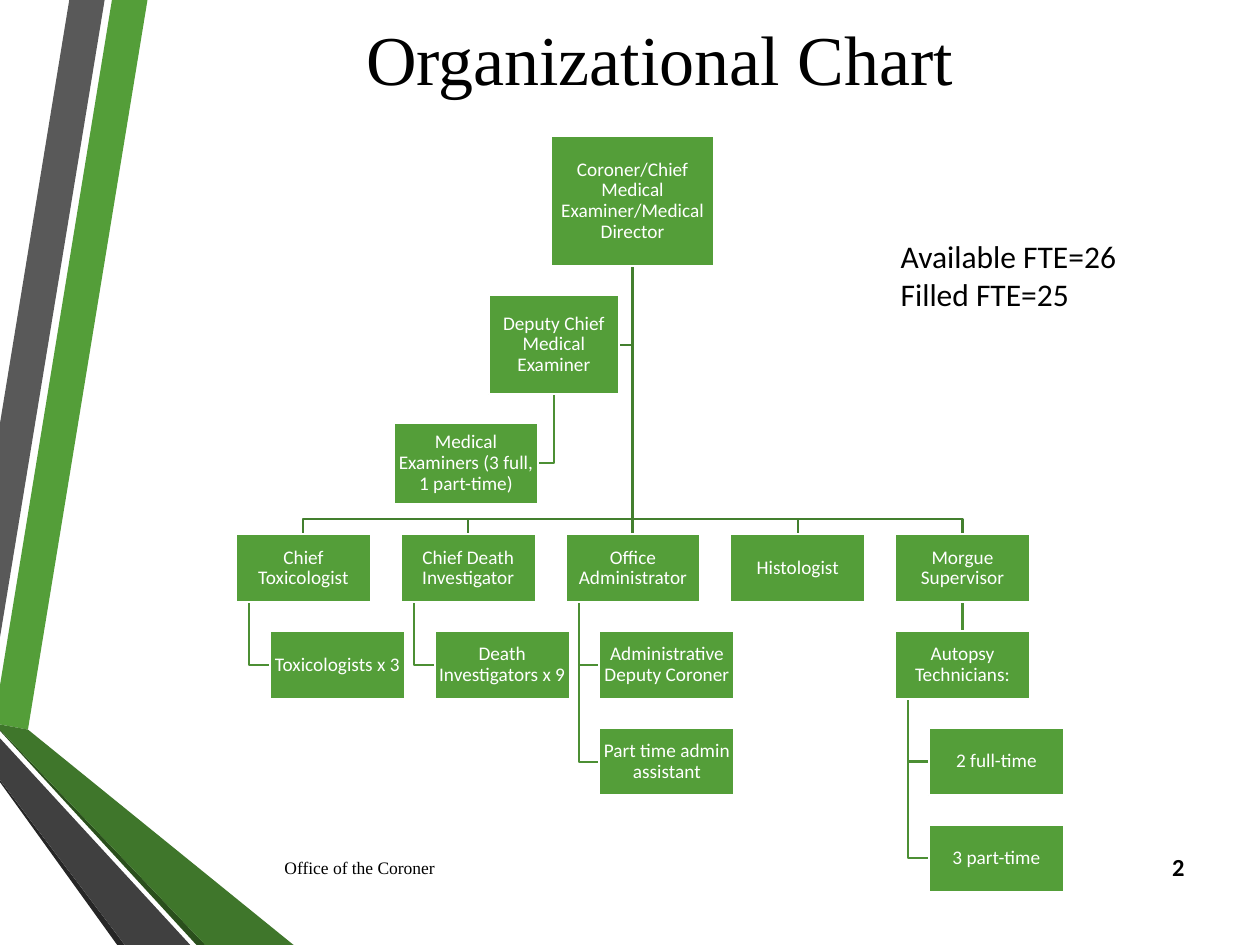
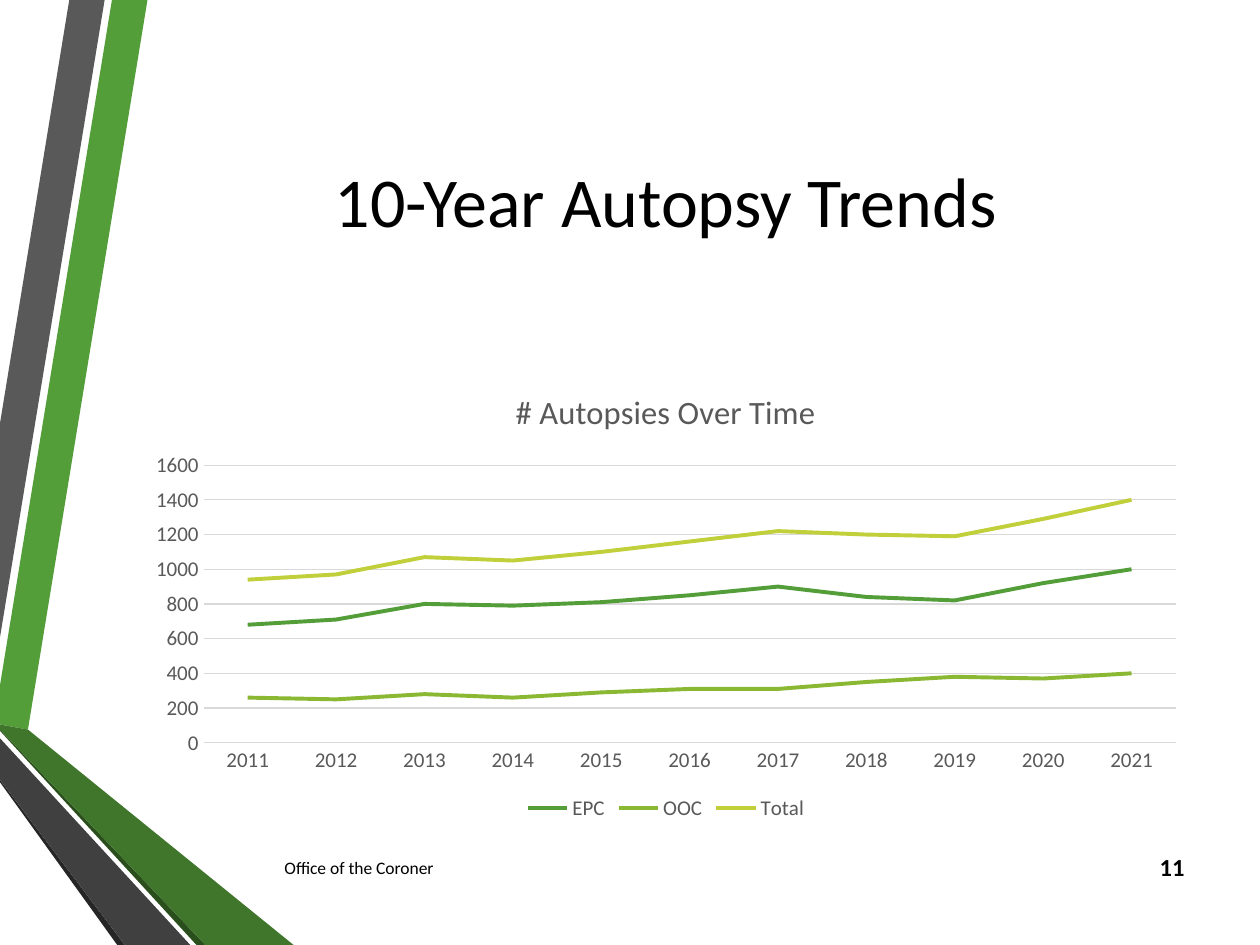
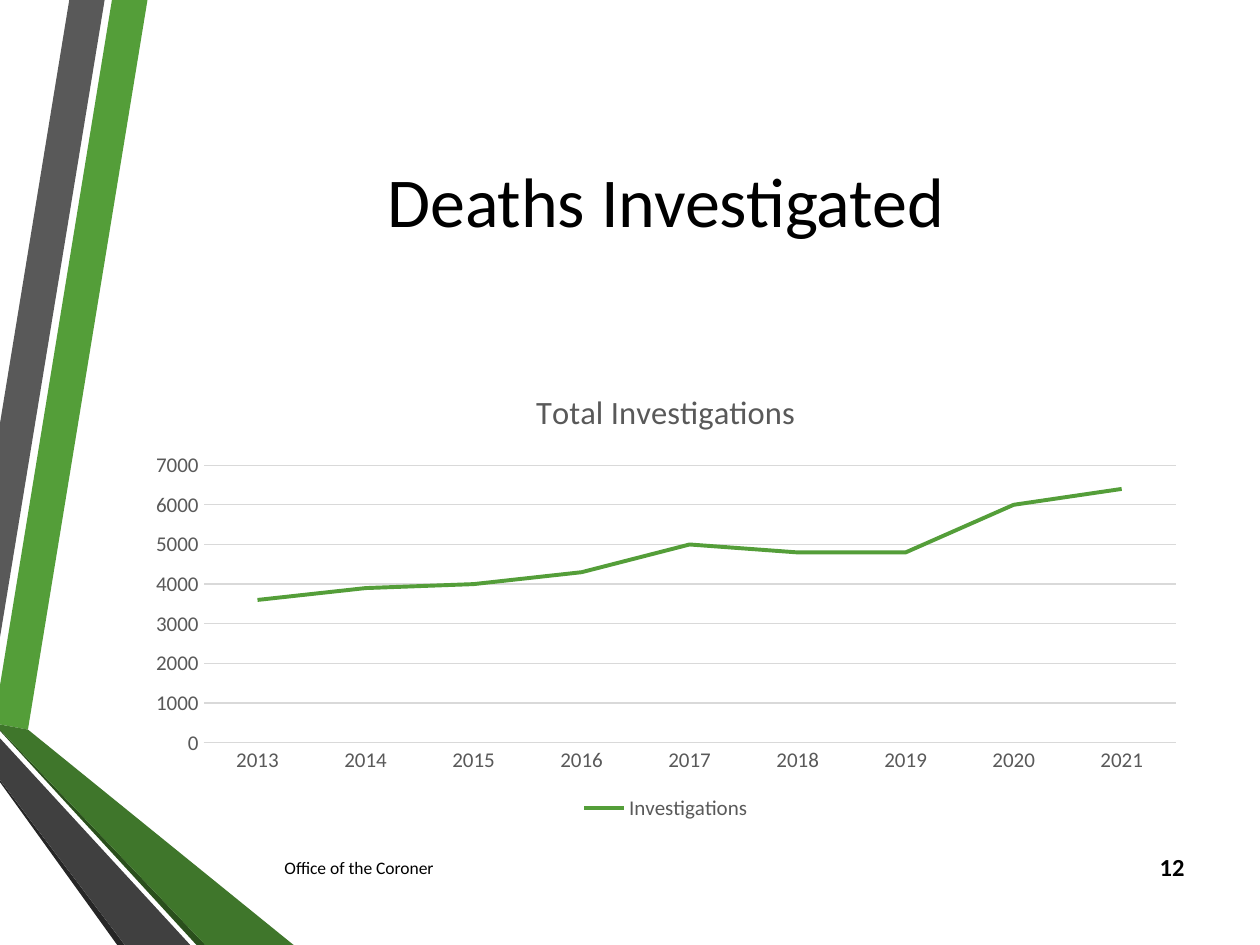
from lxml import etree
from pptx import Presentation
from pptx.chart.data import CategoryChartData
from pptx.dml.color import RGBColor
from pptx.enum.chart import XL_CHART_TYPE, XL_LEGEND_POSITION, XL_TICK_MARK
from pptx.enum.shapes import MSO_CONNECTOR, MSO_SHAPE
from pptx.enum.text import MSO_ANCHOR, PP_ALIGN
from pptx.oxml.ns import qn
from pptx.util import Pt

LINE_CHART = XL_CHART_TYPE.LINE
LEGEND_BOTTOM = XL_LEGEND_POSITION.BOTTOM
NO_TICK = XL_TICK_MARK.NONE
STRAIGHT = MSO_CONNECTOR.STRAIGHT
RECTANGLE = MSO_SHAPE.RECTANGLE
MIDDLE, TOP = MSO_ANCHOR.MIDDLE, MSO_ANCHOR.TOP
LEFT, CENTER, RIGHT = PP_ALIGN.LEFT, PP_ALIGN.CENTER, PP_ALIGN.RIGHT

HEX = {
    "green": "549E39", "leaf": "8AB833", "lime": "C0CF3A",
    "fold": "3F762B", "fold edge": "2A4F1C",
    "grey": "595959", "dark grey": "404040", "near black": "262626",
    "grid": "D9D9D9", "trunk": "437F2E", "branch": "4C8F34",
    "black": "000000", "white": "FFFFFF",
}
COLORS = {name: RGBColor.from_string(value) for name, value in HEX.items()}

FORMATS = {
    "title": {"size": Pt(40), "name": "Calibri"},
    "serif title": {"size": Pt(40), "name": "Times New Roman"},
    "footer": {"size": Pt(10), "name": "Calibri"},
    "serif footer": {"size": Pt(10), "name": "Times New Roman"},
    "number": {"size": Pt(14), "name": "Calibri", "bold": True},
    "staffing": {"size": Pt(18), "name": "Calibri"},
    "position": {"size": Pt(11), "name": "Calibri"},
    "chart": {"size": Pt(12), "name": "Calibri", "bold": False},
    "chart title": {"size": Pt(18.6), "name": "Calibri", "bold": False},
}

BANDS = [
    ("green", [(0, 391.7), (0, 414), (16, 416.9), (84.3, 0), (64, 0)]),
    ("grey", [(59.8, 0), (39.6, 0), (0, 242), (0, 364.3)]),
    ("near black", [(0, 445.7), (0, 447), (67, 540), (71.3, 540)]),
    ("fold edge", [(0, 416.9), (0, 417.6), (112.3, 540), (117.4, 540)]),
    ("fold", [(0, 416.9), (117.4, 540), (167.8, 540), (16, 416.9), (0, 414)]),
    ("dark grey", [(0, 445.7), (71.3, 540), (108.7, 540), (0, 421.9)]),
]


def style_font(font, style, color):
    for attribute, value in FORMATS[style].items():
        setattr(font, attribute, value)
    font.color.rgb = COLORS[color]


def add_text(slide, box, lines, style, align=LEFT, anchor=MIDDLE, wrap=True):
    frame = slide.shapes.add_textbox(*map(Pt, box)).text_frame
    frame.word_wrap = wrap
    frame.vertical_anchor = anchor
    frame.text = "\n".join(lines)
    for paragraph in frame.paragraphs:
        paragraph.alignment = align
        style_font(paragraph.font, style, "black")


deck = Presentation()
deck.slide_width, deck.slide_height = Pt(720), Pt(540)

pages = [
    ("Organizational Chart ", (78.5, -12, 607, 90), "serif ", "2"),
    ("10-Year Autopsy Trends", (77, 36, 607, 156), "", "11"),
    ("Deaths Investigated", (77, 36, 607, 156), "", "12"),
]
slides = []
for title, title_box, typeface, number in pages:
    slide = deck.slides.add_slide(deck.slide_layouts[6])
    slides.append(slide)
    for color, outline in BANDS:
        corners = [(Pt(x), Pt(y)) for x, y in outline]
        builder = slide.shapes.build_freeform(*corners[0])
        builder.add_line_segments(corners[1:], close=True)
        band = builder.convert_to_shape()
        band.shadow.inherit = False
        band.fill.solid()
        band.fill.fore_color.rgb = COLORS[color]
        band.line.fill.background()
    add_text(slide, title_box, [title], typeface + "title", CENTER)
    add_text(slide, (155.5, 481, 418, 29), ["Office of the Coroner"], typeface + "footer")
    add_text(slide, (650, 481, 34, 29), [number], "number", RIGHT)

organization, autopsies, deaths = slides

COLUMN_LEFT, COLUMN_STEP = 134.8, 94.15
ROW_TOP, ROW_STEP = 305.4, 55.25
BOX_WIDTH, BOX_HEIGHT = 77.2, 38.6
REPORT_INDENT, STEM_INDENT = 19.4, 7.6
TRUNK_X, TRUNK_TOP, CROSSBAR_Y = 361.5, 152, 296.8

positions = [
    ("Coroner/Chief Medical Examiner/Medical Director", (314.7, 77.8, 93.6, 74.2)),
    ("Deputy Chief Medical Examiner", (279.4, 168.5, 74.2, 56.9)),
    ("Medical Examiners (3 full, 1 part-time)", (225.2, 241.4, 82.2, 46.8)),
]
routes = [
    ("trunk", [(TRUNK_X, TRUNK_TOP), (TRUNK_X, 197), (353.6, 197)]),
    ("branch", [(316.5, 225.4), (316.5, 264.8), (307.4, 264.8)]),
]
teams = [
    (0, 0, "Chief Toxicologist", ["Toxicologists x 3"]),
    (1, 0, "Chief Death Investigator", ["Death Investigators x 9"]),
    (2, 0, "Office Administrator", ["Administrative Deputy Coroner", "Part time admin assistant"]),
    (3, 0, "Histologist", []),
    (4, 0, "Morgue Supervisor", []),
    (4, 1, "Autopsy Technicians:", ["2 full-time", "3 part-time"]),
]
for column, row, lead, reports in teams:
    left = COLUMN_LEFT + column * COLUMN_STEP
    top = ROW_TOP + row * ROW_STEP
    center = left + BOX_WIDTH / 2
    positions.append((lead, (left, top, BOX_WIDTH, BOX_HEIGHT)))
    if row:
        routes.append(("branch", [(center, top - ROW_STEP + BOX_HEIGHT), (center, top)]))
    elif column == 2:
        routes.append(("trunk", [(TRUNK_X, TRUNK_TOP), (TRUNK_X, top)]))
    else:
        routes.append(("trunk", [(TRUNK_X, TRUNK_TOP), (TRUNK_X, CROSSBAR_Y),
                                 (center, CROSSBAR_Y), (center, top)]))
    stem = left + STEM_INDENT
    report_left = left + REPORT_INDENT
    for level, report in enumerate(reports, 1):
        report_top = top + level * ROW_STEP
        report_middle = report_top + BOX_HEIGHT / 2
        positions.append((report, (report_left, report_top, BOX_WIDTH, BOX_HEIGHT)))
        routes.append(("branch", [(stem, top + BOX_HEIGHT), (stem, report_middle),
                                  (report_left, report_middle)]))

for color, stops in routes:
    corners = [(Pt(x), Pt(y)) for x, y in stops]
    if len(corners) == 2:
        route = organization.shapes.add_connector(STRAIGHT, *corners[0], *corners[1])
        etree.SubElement(route._element.spPr, qn("a:effectLst"))
    else:
        builder = organization.shapes.build_freeform(*corners[0])
        builder.add_line_segments(corners[1:], close=False)
        route = builder.convert_to_shape()
        route.shadow.inherit = False
        route.fill.background()
    route.line.color.rgb = COLORS[color]
    route.line.width = Pt(1.25)

for role, box in positions:
    position = organization.shapes.add_shape(RECTANGLE, *map(Pt, box))
    position.shadow.inherit = False
    position.fill.solid()
    position.fill.fore_color.rgb = COLORS["green"]
    position.line.color.rgb = COLORS["white"]
    position.line.width = Pt(1.25)
    frame = position.text_frame
    frame.word_wrap = True
    frame.vertical_anchor = MIDDLE
    for side in ("left", "top", "right", "bottom"):
        setattr(frame, "margin_" + side, Pt(0.7))
    frame.text = role
    paragraph = frame.paragraphs[0]
    paragraph.alignment = CENTER
    paragraph.line_spacing = 0.9
    style_font(paragraph.font, "position", "white")

add_text(organization, (507.6, 132, 145, 51), ["Available FTE=26", "Filled FTE=25"],
         "staffing", anchor=TOP, wrap=False)

trends = [
    (autopsies, "# Autopsies Over Time", range(2011, 2022), 1600, 200, [
        ("EPC", "green", [680, 710, 800, 790, 810, 850, 900, 840, 820, 920, 1000]),
        ("OOC", "leaf", [260, 250, 280, 260, 290, 310, 310, 350, 380, 370, 400]),
        ("Total", "lime", [940, 970, 1070, 1050, 1100, 1160, 1220, 1200, 1190, 1290, 1400]),
    ]),
    (deaths, "Total Investigations", range(2013, 2022), 7000, 1000, [
        ("Investigations", "green", [3600, 3900, 4000, 4300, 5000, 4800, 4800, 6000, 6400]),
    ]),
]
for slide, heading, years, maximum, step, counts in trends:
    data = CategoryChartData()
    data.categories = [str(year) for year in years]
    for name, color, values in counts:
        data.add_series(name, values)
    chart = slide.shapes.add_chart(LINE_CHART, Pt(77), Pt(210), Pt(607), Pt(262), data).chart
    style_font(chart.font, "chart", "grey")

    chart.has_title = True
    chart.chart_title.include_in_layout = False
    chart.chart_title.text_frame.text = heading
    style_font(chart.chart_title.text_frame.paragraphs[0].runs[0].font, "chart title", "grey")

    chart.has_legend = True
    chart.legend.position = LEGEND_BOTTOM
    chart.legend.include_in_layout = False
    style_font(chart.legend.font, "chart", "grey")

    year_axis, count_axis = chart.category_axis, chart.value_axis
    for axis in (year_axis, count_axis):
        axis.major_tick_mark = axis.minor_tick_mark = NO_TICK
        style_font(axis.tick_labels.font, "chart", "grey")
    count_axis.minimum_scale, count_axis.maximum_scale = 0, maximum
    count_axis.major_unit = step
    count_axis.format.line.fill.background()
    for line in (year_axis.format.line, count_axis.major_gridlines.format.line):
        line.color.rgb = COLORS["grid"]
        line.width = Pt(0.75)

    chart.plots[0].vary_by_categories = False
    for series, (name, color, values) in zip(chart.plots[0].series, counts):
        series.smooth = False
        series.format.line.color.rgb = COLORS[color]
        series.format.line.width = Pt(2.25)

deck.save("out.pptx")
